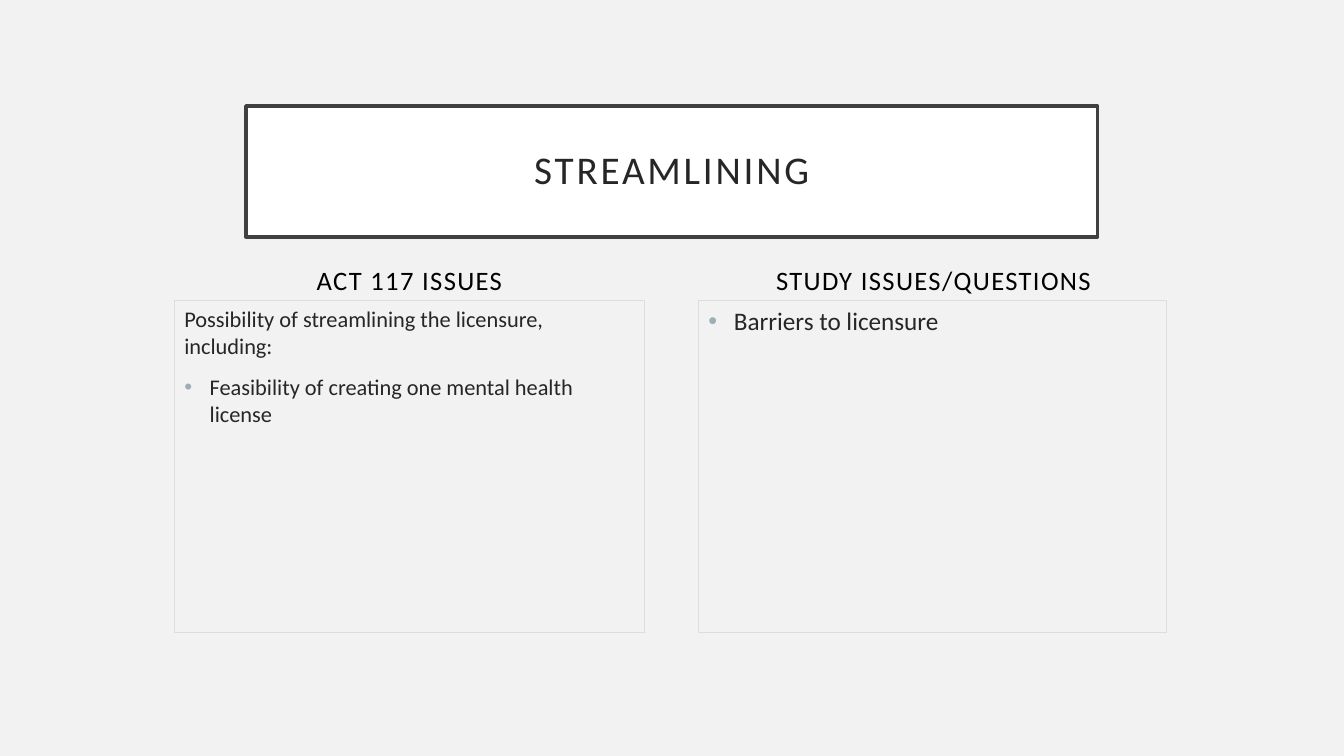
from dataclasses import dataclass

from lxml import etree
from pptx import Presentation
from pptx import util as u
from pptx.dml import color
from pptx.enum import text
from pptx.oxml import ns

FONT = "Calibri"
BACKGROUND = "F2F2F2"
BODY_COLOUR = "262626"
BULLET_COLOUR = "9BAFB5"
BULLET_INDENT = u.Cm(0.64)
HEADING_TOP, HEADING_HEIGHT = 6.43, 1.14
PANEL_TOP, PANEL_HEIGHT = HEADING_TOP + HEADING_HEIGHT, 8.38


@dataclass
class Style:
    size: int
    colour: str
    spacing: int = 0
    centred: bool = False
    space_before: int = 10
    line_spacing: float = 1.0


@dataclass
class Line:
    wording: str
    bulleted: bool = False


@dataclass
class Column:
    heading_index: int
    left: float
    panel_width: float
    heading: str
    lines: list[Line]
    size: int
    fill: str | None = None


COLUMNS = [
    Column(1, 4.39, 11.86, "ACT 117 ISSUES", [
        Line("Possibility of streamlining the licensure, including:"),
        Line("Feasibility of creating one mental health license", True),
    ], 16),
    Column(3, 17.6, 11.81, "STUDY ISSUES/QUESTIONS",
           [Line("Barriers to licensure", True)], 18, BACKGROUND),
]
TITLE_STYLE = Style(28, BODY_COLOUR, 2, True, 0, 0.9)
HEADING_STYLE = Style(19, "000000", 1, True)


def rgb(value: str) -> color.RGBColor:
    return color.RGBColor.from_string(value)


def place(shape, left: float, top: float, width: float, height: float) -> None:
    shape.left, shape.top = u.Cm(left), u.Cm(top)
    shape.width, shape.height = u.Cm(width), u.Cm(height)


def outline(shape, colour: str, points: float, fill: str | None) -> None:
    shape.line.color.rgb = rgb(colour)
    shape.line.width = u.Pt(points)
    if fill:
        shape.fill.solid()
        shape.fill.fore_color.rgb = rgb(fill)


def set_bullet(paragraph, bulleted: bool) -> None:
    properties = paragraph._p.get_or_add_pPr()
    indent = BULLET_INDENT if bulleted else 0
    properties.set("marL", str(indent))
    properties.set("indent", str(-indent))
    if not bulleted:
        etree.SubElement(properties, ns.qn("a:buNone"))
        return
    bullet_colour = etree.SubElement(properties, ns.qn("a:buClr"))
    etree.SubElement(bullet_colour, ns.qn("a:srgbClr"), val=BULLET_COLOUR)
    etree.SubElement(properties, ns.qn("a:buFont"), typeface="Arial")
    etree.SubElement(properties, ns.qn("a:buChar"), char="•")


def write(shape, lines: list[Line], style: Style, anchor: text.MSO_ANCHOR) -> None:
    frame = shape.text_frame
    frame.text = "\n".join(line.wording for line in lines)
    frame.word_wrap = True
    frame.auto_size = text.MSO_AUTO_SIZE.NONE
    frame.vertical_anchor = anchor
    for paragraph, line in zip(frame.paragraphs, lines):
        paragraph.alignment = text.PP_ALIGN.CENTER if style.centred else text.PP_ALIGN.LEFT
        paragraph.space_before = u.Pt(style.space_before)
        paragraph.line_spacing = style.line_spacing
        set_bullet(paragraph, line.bulleted)
        for run in paragraph.runs:
            run.font.name = FONT
            run.font.size = u.Pt(style.size)
            run.font.bold = False
            run.font.color.rgb = rgb(style.colour)
            run.font._element.set("spc", str(style.spacing * 100))


def draw_title(slide) -> None:
    title = slide.shapes.title
    place(title, 6.2, 2.67, 21.46, 3.3)
    outline(title, "404040", 2.5, "FFFFFF")
    write(title, [Line("STREAMLINING")], TITLE_STYLE, text.MSO_ANCHOR.MIDDLE)
    frame = title.text_frame
    frame.margin_left = frame.margin_right = u.Cm(0.51)
    frame.margin_top = frame.margin_bottom = u.Cm(0.51)


def draw_column(slide, column: Column) -> None:
    placeholders = {item.placeholder_format.idx: item for item in slide.placeholders}
    heading = placeholders[column.heading_index]
    panel = placeholders[column.heading_index + 1]
    place(heading, column.left, HEADING_TOP, 11.86, HEADING_HEIGHT)
    write(heading, [Line(column.heading)], HEADING_STYLE, text.MSO_ANCHOR.BOTTOM)
    place(panel, column.left, PANEL_TOP, column.panel_width, PANEL_HEIGHT)
    outline(panel, "D7DFE1", 0.75, column.fill)
    write(panel, column.lines, Style(column.size, BODY_COLOUR), text.MSO_ANCHOR.TOP)


def main() -> None:
    presentation = Presentation()
    presentation.slide_width, presentation.slide_height = u.Cm(33.87), u.Cm(19.05)
    slide = presentation.slides.add_slide(presentation.slide_layouts.get_by_name("Comparison"))
    slide.background.fill.solid()
    slide.background.fill.fore_color.rgb = rgb(BACKGROUND)
    draw_title(slide)
    for column in COLUMNS:
        draw_column(slide, column)
    presentation.save("out.pptx")


if __name__ == "__main__":
    main()
